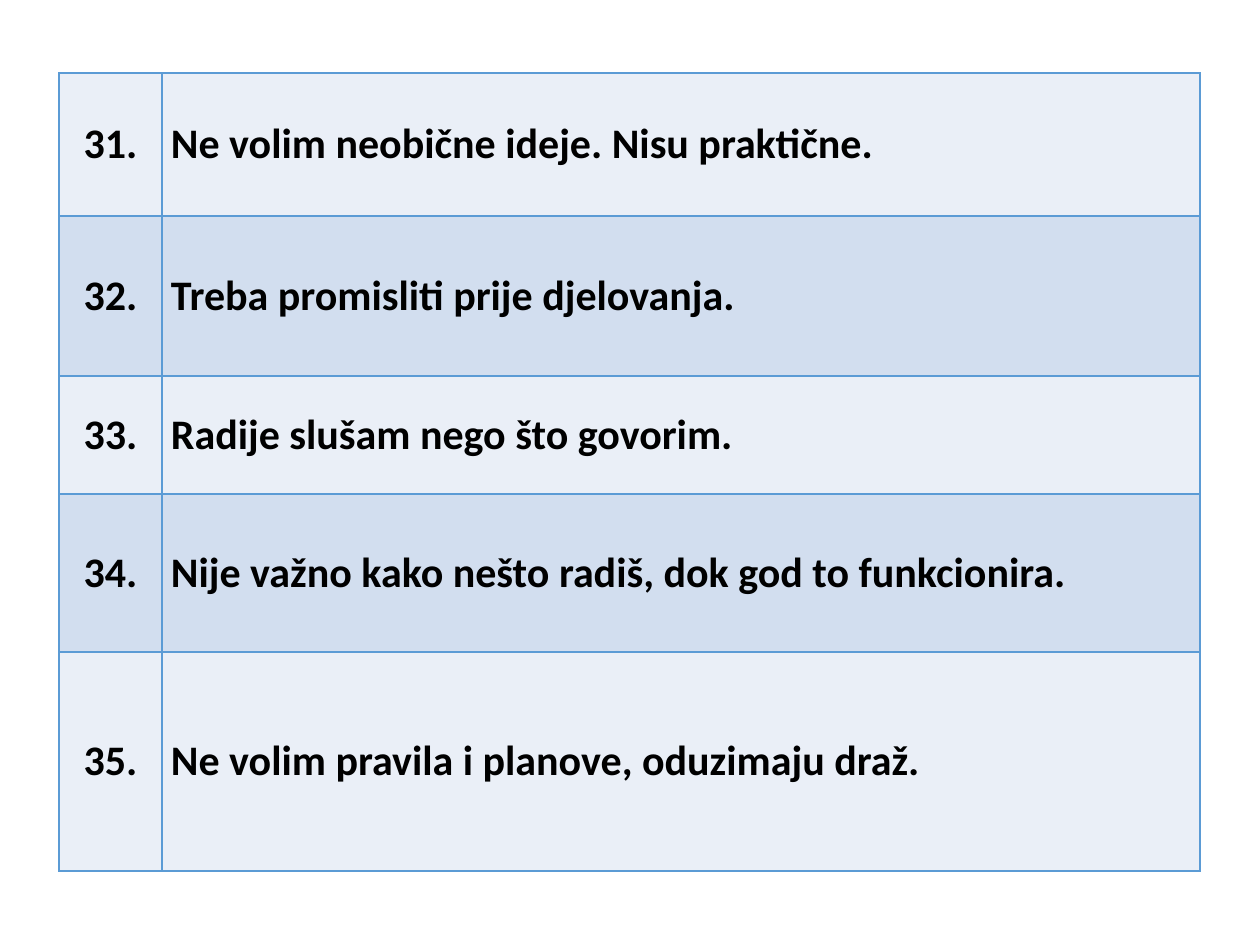
from lxml.etree import SubElement
from pptx import Presentation
from pptx.dml.color import RGBColor as RGB
from pptx.enum.text import MSO_VERTICAL_ANCHOR as Anchor, PP_PARAGRAPH_ALIGNMENT as Align
from pptx.oxml.ns import qn
from pptx.util import Pt

EMU_PER_PX = 914400 / 126
COLORS = {"light": "EAEFF7", "dark": "D2DEEF", "border": "5B9BD5", "text": "000000"}
STATEMENTS = [
    "Ne volim neobične ideje. Nisu praktične.",
    "Treba promisliti prije djelovanja.",
    "Radije slušam nego što govorim.",
    "Nije važno kako nešto radiš, dok god to funkcionira.",
    "Ne volim pravila i planove, oduzimaju draž.",
]
FIRST_NUMBER = 31
COLUMN_WIDTHS = [103, 1038]
ROW_HEIGHTS = [143, 160, 118, 158, 219]


def px(length):
    return round(length * EMU_PER_PX)


class SlideBuilder:
    font = "Calibri"
    size = Pt(24)
    border_width = Pt(1)

    def __init__(self, slide):
        self.slide = slide

    def table(self, left, top, widths, heights, rows):
        frame = self.slide.shapes.add_table(
            len(rows), len(widths), px(left), px(top), px(sum(widths)), px(sum(heights)))
        table = frame.table
        table.first_row = False
        for column, width in zip(table.columns, widths):
            column.width = px(width)
        for row, height in zip(table.rows, heights):
            row.height = px(height)
        for row_index, texts in enumerate(rows):
            fill = "dark" if row_index % 2 else "light"
            for column_index, text in enumerate(texts):
                align = Align.LEFT if column_index else Align.CENTER
                self.cell(table.cell(row_index, column_index), text, fill, align)

    def cell(self, cell, text, fill, align):
        self.borders(cell)
        cell.fill.solid()
        cell.fill.fore_color.rgb = RGB.from_string(COLORS[fill])
        cell.vertical_anchor = Anchor.MIDDLE
        cell.margin_left = cell.margin_right = px(9)
        cell.margin_top = cell.margin_bottom = px(5)
        cell.text_frame.text = text
        paragraph = cell.text_frame.paragraphs[0]
        paragraph.alignment = align
        font = paragraph.runs[0].font
        font.name, font.size, font.bold = self.font, self.size, True
        font.color.rgb = RGB.from_string(COLORS["text"])

    def borders(self, cell):
        properties = cell._tc.get_or_add_tcPr()
        for side in ("L", "R", "T", "B"):
            line = SubElement(properties, qn(f"a:ln{side}"), w=str(self.border_width))
            line_fill = SubElement(line, qn("a:solidFill"))
            SubElement(line_fill, qn("a:srgbClr"), val=COLORS["border"])


def main():
    presentation = Presentation()
    presentation.slide_width, presentation.slide_height = px(1260), px(945)
    builder = SlideBuilder(presentation.slides.add_slide(presentation.slide_layouts[6]))
    rows = [(f"{number}.", text) for number, text in enumerate(STATEMENTS, FIRST_NUMBER)]
    builder.table(59, 73, COLUMN_WIDTHS, ROW_HEIGHTS, rows)
    presentation.save("out.pptx")


if __name__ == "__main__":
    main()
